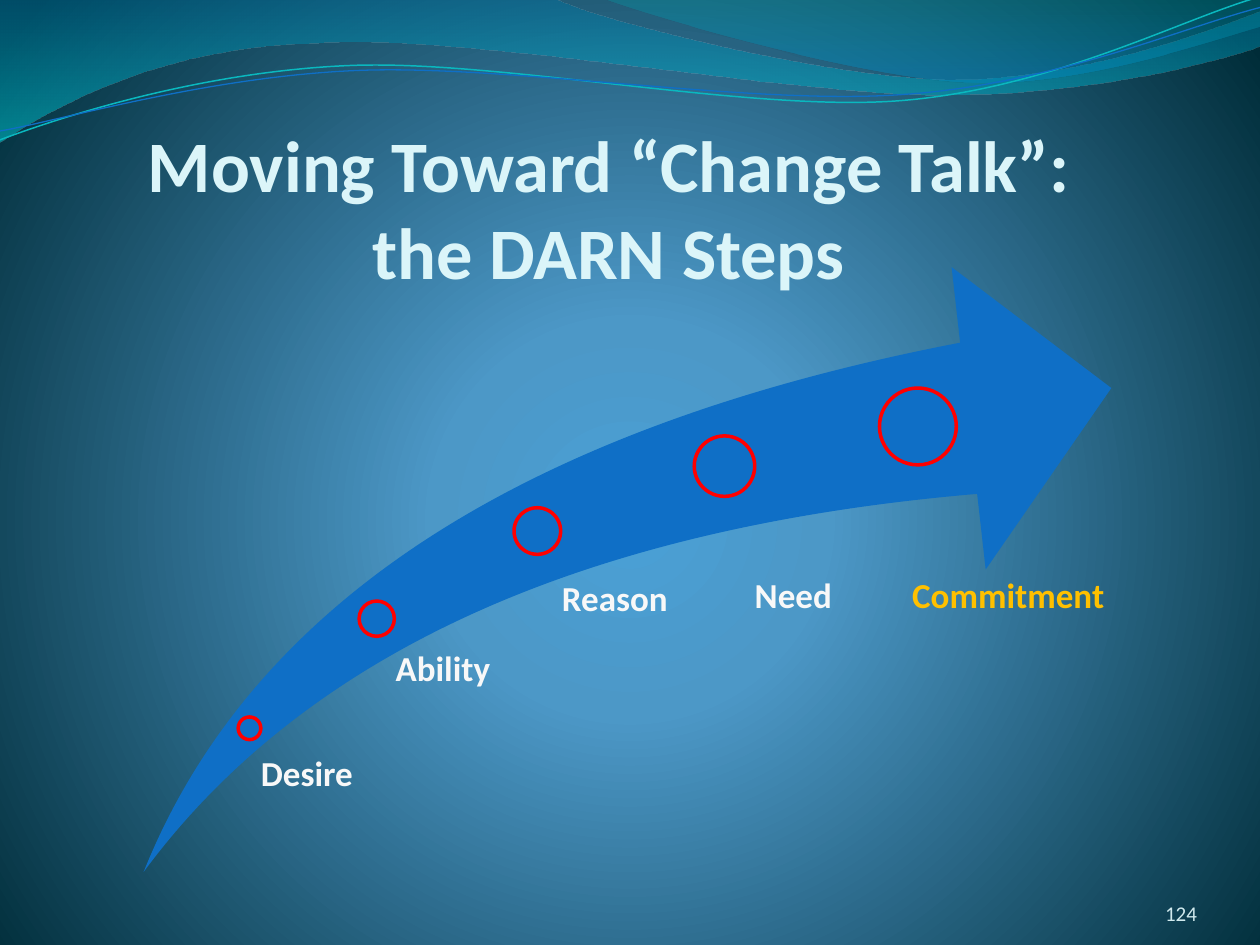
from math import cos, radians, sin
from typing import NamedTuple

from pptx import Presentation
from pptx.dml.color import RGBColor
from pptx.enum.shapes import MSO_SHAPE
from pptx.enum.text import MSO_ANCHOR, PP_ALIGN
from pptx.oxml import parse_xml
from pptx.oxml.ns import nsdecls
from pptx.util import Emu, Pt

PX = 9144  # EMU per px, 100 px to the inch
FONT = "Calibri"
BLUE, RED, WHITE, GOLD = "0F6FC6", "FF0000", "F8F8F8", "FFC000"
TILT = 2.7  # degrees the thin waves are turned anticlockwise


class Step(NamedTuple):
    name: str
    circle: tuple[int, int, int]  # left, top, diameter
    label: tuple[int, int, int, int]
    inset: int
    color: str = WHITE


class Wave(NamedTuple):
    """Segments are lines (x, y) or cubic curves (x1, y1, x2, y2, x, y)."""
    start: tuple[int, int]
    segments: list[tuple[int, ...]]
    stops: tuple[tuple[int, str, int], ...] = ()  # position, colour, opacity
    line: str = ""
    width: float = 0
    pivot: tuple[int, int] = (0, 0)


STEPS = [
    Step("Desire", (189, 569, 18), (198, 600, 101, 69), 9),
    Step("Ability", (285, 477, 28), (299, 517, 127, 149), 15),
    Step("Reason", (408, 403, 37), (426, 461, 148, 180), 20),
    Step("Need", (551, 346, 48), (574, 459, 154, 162), 25),
    Step("Commitment", (698, 308, 61), (692, 459, 230, 163), 32, GOLD),
]

WAVES = [
    Wave((0, 0), [(440, -1), (476, 17, 664, 63, 758, 63), (853, 63, 958, 26, 1000, 9),
                  (1001, 36), (983, 44, 870, 76, 746, 75), (622, 75, 382, 28, 257, 34),
                  (129, 36, 46, 83, -1, 113)],
         stops=((0, "0074A1", 45), (100, "00C6CF", 55))),
    Wave((479, -1), [(509, 11, 682, 62, 769, 65), (856, 69, 961, 32, 1000, 21), (1000, 0)],
         stops=((0, "00A1A9", 30), (80, "008BBF", 45))),
    Wave((0, 111), [(48, 93, 158, 57, 277, 52), (395, 47, 593, 89, 713, 80),
                    (833, 71, 938, 15, 998, -2)],
         line="0AB8BF", width=0.85, pivot=(499, 58)),
    Wave((0, 104), [(47, 96, 164, 61, 283, 56), (403, 51, 597, 84, 717, 75),
                    (836, 67, 941, 21, 1000, 6)],
         line=BLUE, width=0.75, pivot=(500, 59)),
]


def px(n: float) -> Emu:
    return Emu(round(n * PX))


def rgb(color: str) -> RGBColor:
    return RGBColor.from_string(color)


def gradient(stops, direction: str):
    """Return a gradFill element; direction is its a:lin or a:path part."""
    gs = "".join(
        f'<a:gs pos="{pos * 1000}"><a:srgbClr val="{color}">'
        f'<a:alpha val="{opacity * 1000}"/></a:srgbClr></a:gs>'
        for pos, color, opacity in stops)
    return parse_xml(f'<a:gradFill {nsdecls("a")} rotWithShape="1">'
                     f'<a:gsLst>{gs}</a:gsLst>{direction}</a:gradFill>')


def replace_solid(parent, grad) -> None:
    solid = parent.xpath("./a:solidFill")[0]
    parent.replace(solid, grad)


def set_background(s) -> None:
    s.background.fill.solid()
    grad = gradient(
        ((0, "4AA0D6", 100), (25, "4C98C7", 100), (100, "002C38", 100)),
        '<a:path path="circle"><a:fillToRect l="10000" t="110000" r="10000" b="100000"/></a:path>')
    replace_solid(s.element.xpath("./p:cSld/p:bg/p:bgPr")[0], grad)


def turn(point: tuple[int, int], pivot: tuple[int, int]) -> tuple[float, float]:
    """Turn a point clockwise by TILT, to undo the shape's own rotation."""
    dx, dy = point[0] - pivot[0], point[1] - pivot[1]
    c, n = cos(radians(TILT)), sin(radians(TILT))
    return pivot[0] + dx * c - dy * n, pivot[1] + dx * n + dy * c


def bend(sp, segments: list[tuple[int, ...]]) -> None:
    """Join each three lines that belong to a curve segment into one cubic curve."""
    lines = iter(sp.element.xpath(".//a:path/a:lnTo"))
    for seg in segments:
        first, *others = [next(lines) for _ in range(len(seg) // 2)]
        if others:
            curve = parse_xml(f'<a:cubicBezTo {nsdecls("a")}/>')
            first.addprevious(curve)
            for ln in (first, *others):
                curve.append(ln[0])
                ln.getparent().remove(ln)


def add_wave(s, wave: Wave) -> None:
    points = [wave.start]
    for seg in wave.segments:
        points += zip(seg[::2], seg[1::2])
    if wave.line:
        points = [turn(point, wave.pivot) for point in points]
    start, *rest = [(px(x), px(y)) for x, y in points]
    builder = s.shapes.build_freeform(*start)
    builder.add_line_segments(rest, close=bool(wave.stops))
    sp = builder.convert_to_shape()
    bend(sp, wave.segments)
    sp.shadow.inherit = False
    if wave.stops:
        sp.fill.solid()
        replace_solid(sp.element.spPr, gradient(wave.stops, '<a:lin ang="5400000" scaled="1"/>'))
        sp.line.fill.background()
    else:
        sp.rotation = 360 - TILT
        sp.fill.background()
        sp.line.color.rgb = rgb(wave.line)
        sp.line.width = Pt(wave.width)


def add_shape(s, kind: MSO_SHAPE, box: tuple[int, ...], line: str = ""):
    sp = s.shapes.add_shape(kind, *map(px, box))
    sp.shadow.inherit = False
    sp.fill.solid()
    sp.fill.fore_color.rgb = rgb(BLUE)
    if line:
        sp.line.color.rgb = rgb(line)
        sp.line.width = Pt(2)
    else:
        sp.line.fill.background()
    return sp


def add_text(s, text: str, box: tuple[int, ...], *, size: float, color: str,
             bold: bool = False, align=PP_ALIGN.LEFT, anchor=MSO_ANCHOR.TOP,
             left: int = 0, top: int = 0, spacing: float = 1.0) -> None:
    tf = s.shapes.add_textbox(*map(px, box)).text_frame
    tf.word_wrap = True
    tf.vertical_anchor = anchor
    tf.margin_left, tf.margin_top = px(left), px(top)
    tf.margin_right = tf.margin_bottom = 0
    p = tf.paragraphs[0]
    p.text = text
    p.alignment = align
    p.line_spacing = spacing
    for r in p.runs:
        r.font.name, r.font.size, r.font.bold = FONT, Pt(size), bold
        r.font.color.rgb = rgb(color)


def main() -> None:
    prs = Presentation()
    prs.slide_width, prs.slide_height = px(1000), px(750)
    s = prs.slides.add_slide(prs.slide_layouts[6])
    set_background(s)
    for wave in WAVES:
        add_wave(s, wave)
    add_text(s, "Moving Toward “Change Talk”:\vthe DARN Steps", (33, 108, 900, 125),
             size=41.4, color="DBF5F9", bold=True, align=PP_ALIGN.CENTER,
             anchor=MSO_ANCHOR.BOTTOM, top=5)
    arrow = add_shape(s, MSO_SHAPE.SWOOSH_ARROW, (114, 212, 768, 480))
    arrow.adjustments[0] = arrow.adjustments[1] = 0.25
    for step in STEPS:
        x, y, d = step.circle
        add_shape(s, MSO_SHAPE.OVAL, (x, y, d, d), line=RED)
        add_text(s, step.name, step.label, size=20, color=step.color, bold=True,
                 left=step.inset, spacing=0.9)
    add_text(s, "124", (867, 695, 83, 40), size=12, color="D1EAEE",
             align=PP_ALIGN.RIGHT, anchor=MSO_ANCHOR.BOTTOM)
    prs.save("out.pptx")


if __name__ == "__main__":
    main()
